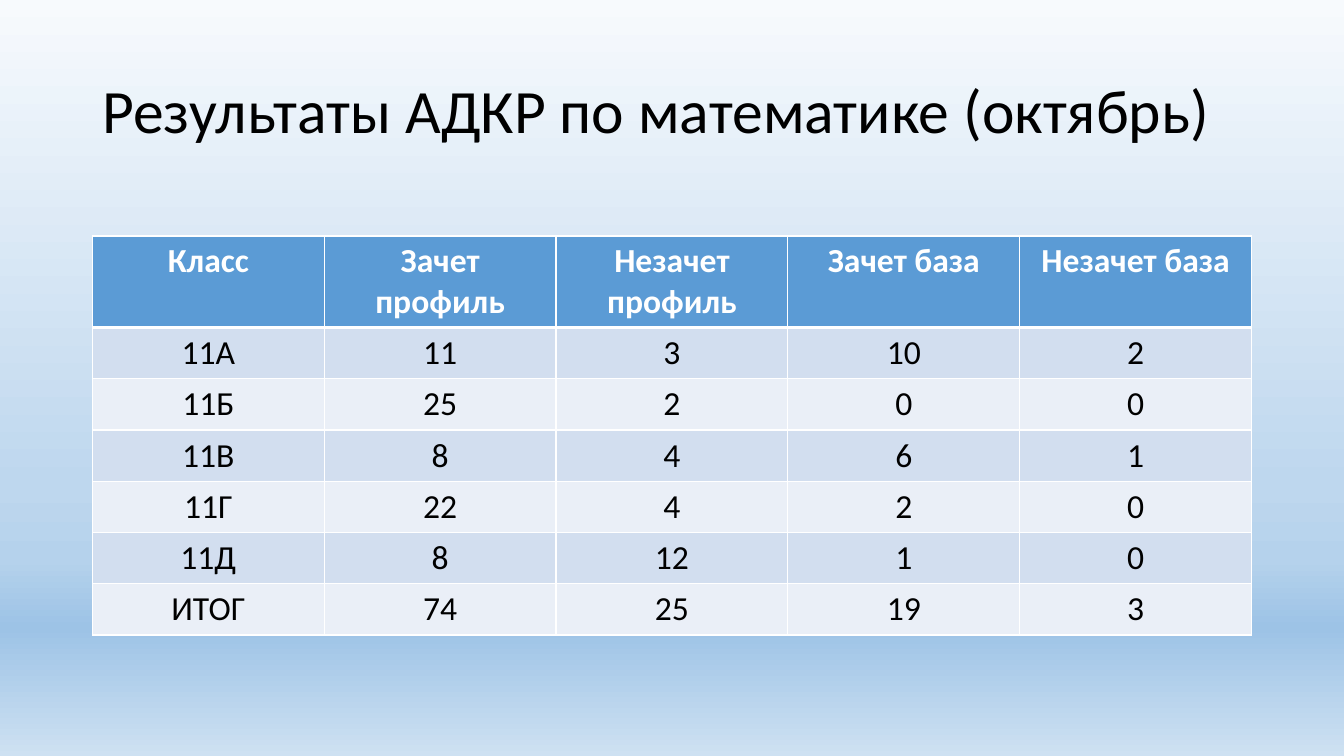
"""Build the slide with the October mathematics test results by class."""
from dataclasses import dataclass

from lxml.etree import SubElement
from pptx import Presentation
from pptx.dml.color import RGBColor as Rgb
from pptx.enum.text import MSO_ANCHOR as Anchor, PP_ALIGN as Align
from pptx.oxml.ns import qn
from pptx.slide import Slide
from pptx.table import _Cell as Cell
from pptx.text.text import _Paragraph as Paragraph
from pptx.util import Emu, Inches, Pt


@dataclass(frozen=True)
class Theme:
    font: str = "Calibri"
    title_size: int = 44
    table_size: int = 24
    ink: str = "000000"
    paper: str = "FFFFFF"
    header: str = "5B9BD5"
    bands: tuple[str, str] = ("D2DEEF", "EAEFF7")
    sky: tuple[tuple[int, str], ...] = (
        (0, "F7FAFD"), (64, "BED7EE"), (74, "B5D2EC"), (83, "9DC3E6"), (100, "CEE1F2"))
    thin: int = 1
    thick: int = 3


@dataclass(frozen=True)
class Area:
    column: float
    row: float
    columns: float
    rows: float

    def box(self) -> tuple[Emu, Emu, Emu, Emu]:
        return units(self.column), units(self.row), units(self.columns), units(self.rows)


@dataclass(frozen=True)
class ClassResult:
    name: str
    profile_pass: int
    profile_fail: int
    base_pass: int
    base_fail: int

    def texts(self) -> list[str]:
        scores = (self.profile_pass, self.profile_fail, self.base_pass, self.base_fail)
        return [self.name, *map(str, scores)]


THEME = Theme()
UNITS_PER_INCH = 12
SLIDE_COLUMNS, SLIDE_ROWS = 160, 90
HEADER_ROWS, RESULT_ROWS = 10.9, 6.1
TITLE = "Результаты АДКР по математике (октябрь)"
HEADINGS = ["Класс", "Зачет профиль", "Незачет профиль", "Зачет база", "Незачет база"]
RESULTS = [
    ClassResult("11А", 11, 3, 10, 2),
    ClassResult("11Б", 25, 2, 0, 0),
    ClassResult("11В", 8, 4, 6, 1),
    ClassResult("11Г", 22, 4, 2, 0),
    ClassResult("11Д", 8, 12, 1, 0),
    ClassResult("ИТОГ", 74, 25, 19, 3),
]
TITLE_AREA = Area(11, 4.8, 138, 17.4)
RESULTS_AREA = Area(11, 28.1, 138, HEADER_ROWS + RESULT_ROWS * len(RESULTS))


def units(count: float) -> Emu:
    return Inches(count / UNITS_PER_INCH)


def style_text(paragraph: Paragraph, size: int, color: str, bold: bool = False) -> None:
    for run in paragraph.runs:
        run.font.name = THEME.font
        run.font.size = Pt(size)
        run.font.bold = bold
        run.font.color.rgb = Rgb.from_string(color)


def paint_sky(slide: Slide) -> None:
    sky = slide.background.fill
    sky.gradient()
    sky.gradient_angle = 270
    stops = slide.element.find(f".//{qn('a:gsLst')}")
    for stop in list(stops):
        stops.remove(stop)
    for percent, color in THEME.sky:
        stop = SubElement(stops, qn("a:gs"), pos=str(percent * 1000))
        SubElement(stop, qn("a:srgbClr"), val=color)


def add_title(slide: Slide) -> None:
    frame = slide.shapes.add_textbox(*TITLE_AREA.box()).text_frame
    frame.word_wrap = True
    frame.vertical_anchor = Anchor.MIDDLE
    frame.text = TITLE
    heading = frame.paragraphs[0]
    heading.line_spacing = 0.9
    style_text(heading, THEME.title_size, THEME.ink)


def draw_borders(cell: Cell, top: int, bottom: int) -> None:
    properties = cell._tc.get_or_add_tcPr()
    widths = {"a:lnL": THEME.thin, "a:lnR": THEME.thin, "a:lnT": top, "a:lnB": bottom}
    for side, width in widths.items():
        border = SubElement(properties, qn(side), w=str(Pt(width)))
        paint = SubElement(border, qn("a:solidFill"))
        SubElement(paint, qn("a:srgbClr"), val=THEME.paper)


def fill_cell(cell: Cell, text: str, row: int) -> None:
    is_header = row == 0
    draw_borders(cell, THEME.thick if row == 1 else THEME.thin,
                 THEME.thick if is_header else THEME.thin)
    cell.fill.solid()
    cell.fill.fore_color.rgb = Rgb.from_string(
        THEME.header if is_header else THEME.bands[(row - 1) % 2])
    cell.text_frame.text = text
    label = cell.text_frame.paragraphs[0]
    label.alignment = Align.CENTER
    style_text(label, THEME.table_size, THEME.paper if is_header else THEME.ink, is_header)


def add_results(slide: Slide) -> None:
    lines = [HEADINGS, *(result.texts() for result in RESULTS)]
    results = slide.shapes.add_table(len(lines), len(HEADINGS), *RESULTS_AREA.box()).table
    for row, line in enumerate(lines):
        results.rows[row].height = units(RESULT_ROWS if row else HEADER_ROWS)
        for column, text in enumerate(line):
            fill_cell(results.cell(row, column), text, row)


def main() -> None:
    deck = Presentation()
    deck.slide_width = units(SLIDE_COLUMNS)
    deck.slide_height = units(SLIDE_ROWS)
    slide = deck.slides.add_slide(deck.slide_layouts[6])
    paint_sky(slide)
    add_title(slide)
    add_results(slide)
    deck.save("out.pptx")


if __name__ == "__main__":
    main()
